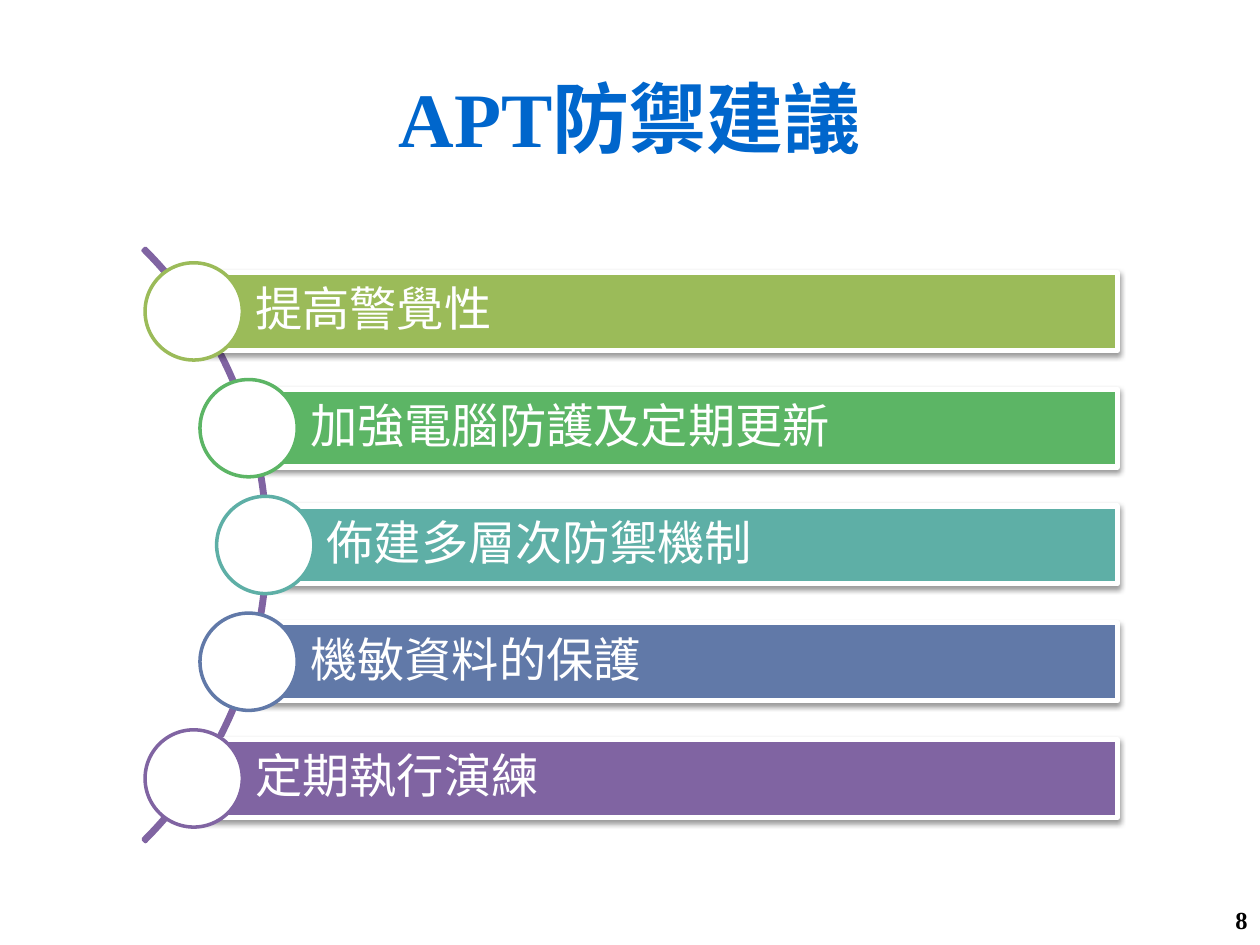
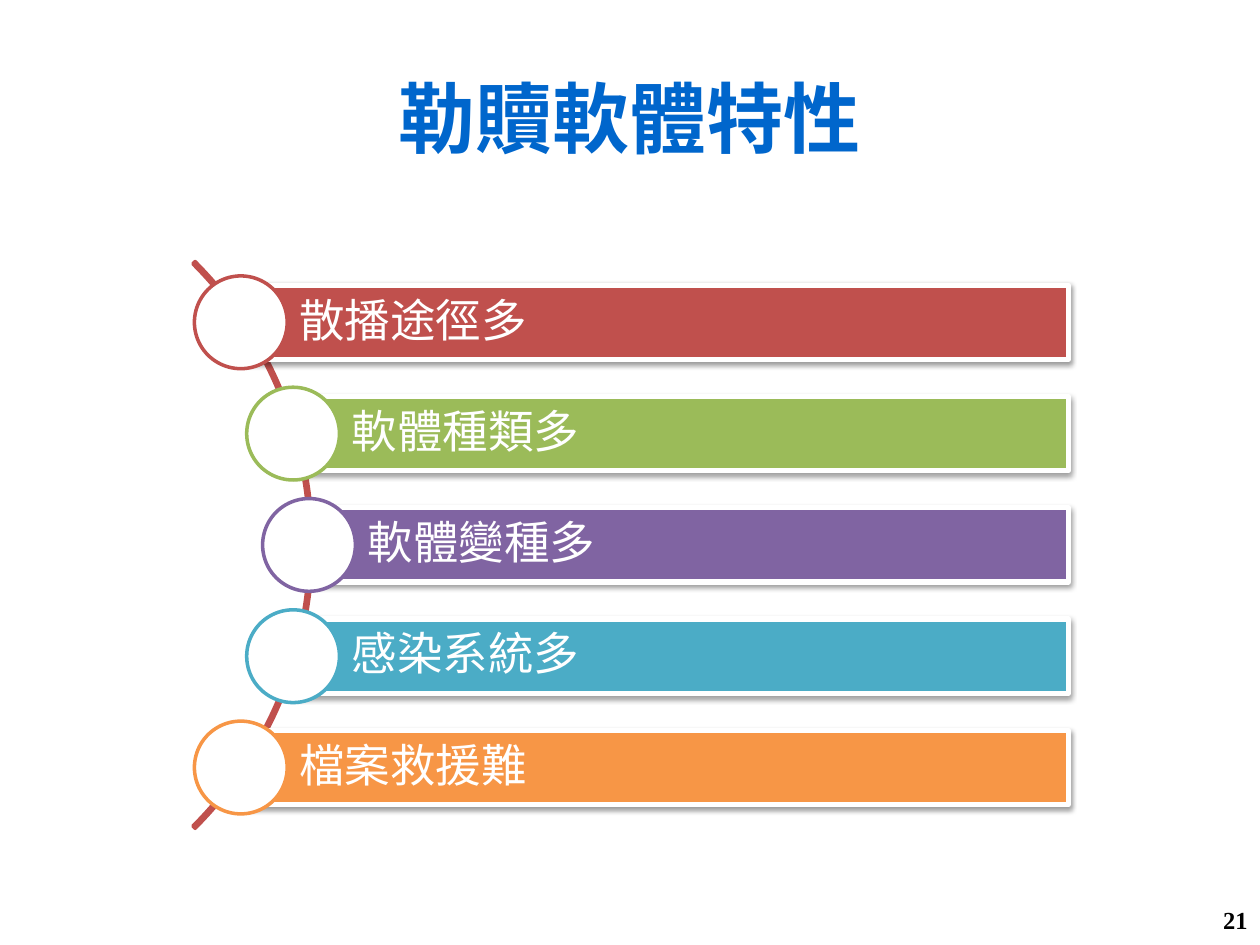
import math
from dataclasses import dataclass

import pptx
import pptx.dml.color
import pptx.enum.shapes
import pptx.enum.text
import pptx.oxml
import pptx.oxml.ns
import pptx.util

Pt = pptx.util.Pt
Shape = pptx.enum.shapes.MSO_SHAPE
Align = pptx.enum.text.PP_ALIGN

COLORS = {
    "title": "0066CC", "white": "FFFFFF", "black": "000000",
    "red": "C0504D", "olive": "9BBB59", "green": "5CB565", "teal": "5EAFA6",
    "slate": "6179A8", "purple": "8064A2", "aqua": "4BACC6", "orange": "F79646",
}
SERIF = "Times New Roman"
SANS = "Noto Sans CJK SC"
ARC_CENTER_Y = 311.4


@dataclass
class Item:
    text: str
    color: str


@dataclass
class CurvedList:
    """Bars whose left ends, marked by circles, follow an arc."""
    arc_color: str
    arc_center_x: float
    arc_diameter: float
    track_radius: float  # distance of circle centres from the arc centre
    circle: float
    right: float
    font: str
    size: float
    items: list[Item]


@dataclass
class Page:
    title: str
    number: str
    curved_list: CurvedList


PAGES = [
    Page("APT防禦建議", "8", CurvedList(
        "purple", -86.4, 479.5, 238, 55.6, 638.6, SERIF, 27, [
            Item("提高警覺性", "olive"),
            Item("加強電腦防護及定期更新", "green"),
            Item("佈建多層次防禦機制", "teal"),
            Item("機敏資料的保護", "slate"),
            Item("定期執行演練", "purple"),
        ])),
    Page("勒贖軟體特性", "21", CurvedList(
        "red", -50.4, 458, 227, 53, 610.6, SANS, 26, [
            Item("散播途徑多", "red"),
            Item("軟體種類多", "olive"),
            Item("軟體變種多", "purple"),
            Item("感染系統多", "aqua"),
            Item("檔案救援難", "orange"),
        ])),
]


def rgb(name: str) -> pptx.dml.color.RGBColor:
    return pptx.dml.color.RGBColor.from_string(COLORS[name])


def write_text(shape, text: str, *, size: float, color: str, font: str = SERIF,
               bold: bool = False, align=Align.LEFT, line_spacing: float = 1.0) -> None:
    frame = shape.text_frame
    frame.word_wrap = True
    frame.vertical_anchor = pptx.enum.text.MSO_ANCHOR.MIDDLE
    paragraph = frame.paragraphs[0]
    paragraph.alignment = align
    paragraph.line_spacing = line_spacing
    run = paragraph.add_run()
    run.text = text
    run.font.size = Pt(size)
    run.font.bold = bold
    run.font.color.rgb = rgb(color)
    run.font.name = font
    latin = run.font._element.find(pptx.oxml.ns.qn("a:latin"))
    latin.addnext(pptx.oxml.parse_xml(
        f'<a:ea {pptx.oxml.ns.nsdecls("a")} typeface="{SANS}"/>'))


def add_text_box(slide, left: float, top: float, width: float, height: float,
                 text: str, **text_format) -> None:
    box = slide.shapes.add_textbox(Pt(left), Pt(top), Pt(width), Pt(height))
    write_text(box, text, **text_format)


def add_preset(slide, preset, left: float, top: float, width: float, height: float,
               *, fill: str | None, line: str, line_width: float):
    shape = slide.shapes.add_shape(preset, Pt(left), Pt(top), Pt(width), Pt(height))
    shape.shadow.inherit = False
    if fill:
        shape.fill.solid()
        shape.fill.fore_color.rgb = rgb(fill)
    else:
        shape.fill.background()
    shape.line.color.rgb = rgb(line)
    shape.line.width = Pt(line_width)
    return shape


def add_drop_shadow(shape) -> None:
    effects = shape._element.spPr.find(pptx.oxml.ns.qn("a:effectLst"))
    effects.append(pptx.oxml.parse_xml(
        f'<a:outerShdw {pptx.oxml.ns.nsdecls("a")} blurRad="{Pt(3.1)}" '
        f'dist="{Pt(1.6)}" dir="5400000" rotWithShape="0">'
        f'<a:srgbClr val="{COLORS["black"]}"><a:alpha val="38000"/></a:srgbClr>'
        '</a:outerShdw>'))


def add_bar(slide, curved_list: CurvedList, item: Item,
            center_x: float, center_y: float, height: float) -> None:
    bar = add_preset(slide, Shape.RECTANGLE, center_x, center_y - height / 2,
                     curved_list.right - center_x, height,
                     fill=item.color, line="white", line_width=3)
    add_drop_shadow(bar)
    frame = bar.text_frame
    frame.margin_left = Pt(0.79 * height)
    frame.margin_top = frame.margin_right = frame.margin_bottom = Pt(5)
    write_text(bar, item.text, size=curved_list.size, color="white",
               font=curved_list.font, line_spacing=0.9)


def add_curved_list(slide, curved_list: CurvedList) -> None:
    diameter, circle = curved_list.arc_diameter, curved_list.circle
    arc = add_preset(slide, Shape.BLOCK_ARC, curved_list.arc_center_x - diameter / 2,
                     ARC_CENTER_Y - diameter / 2, diameter, diameter,
                     fill=None, line=curved_list.arc_color, line_width=2)
    for index, value in enumerate((189, 27, 0.004)):
        arc.adjustments[index] = value

    bar_height = 0.8 * circle
    pitch = 1.5 * bar_height
    middle = (len(curved_list.items) - 1) / 2
    for index, item in enumerate(curved_list.items):
        offset = (index - middle) * pitch
        center_x = curved_list.arc_center_x + math.sqrt(
            curved_list.track_radius ** 2 - offset ** 2)
        center_y = ARC_CENTER_Y + offset
        add_bar(slide, curved_list, item, center_x, center_y, bar_height)
        add_preset(slide, Shape.OVAL, center_x - circle / 2, center_y - circle / 2,
                   circle, circle, fill="white", line=item.color, line_width=2)


def add_page(presentation, page: Page) -> None:
    slide = presentation.slides.add_slide(presentation.slide_layouts[6])
    add_text_box(slide, 36, 21.6, 648, 90, page.title,
                 size=44, color="title", bold=True, align=Align.CENTER)
    add_curved_list(slide, page.curved_list)
    add_text_box(slide, 552, 511.2, 168, 28.8, page.number,
                 size=14, color="black", bold=True, align=Align.RIGHT)


def main() -> None:
    presentation = pptx.Presentation()
    presentation.slide_width = Pt(720)
    presentation.slide_height = Pt(540)
    for page in PAGES:
        add_page(presentation, page)
    presentation.save("out.pptx")


if __name__ == "__main__":
    main()
